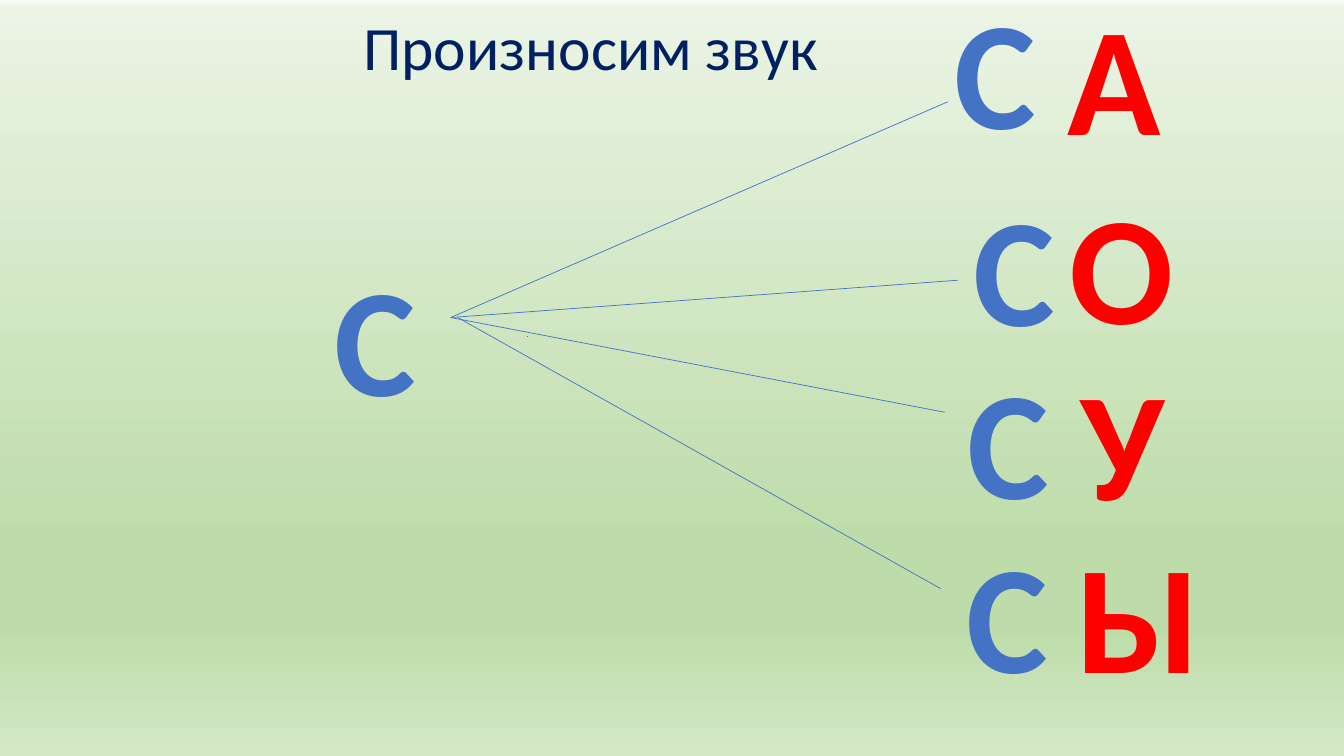
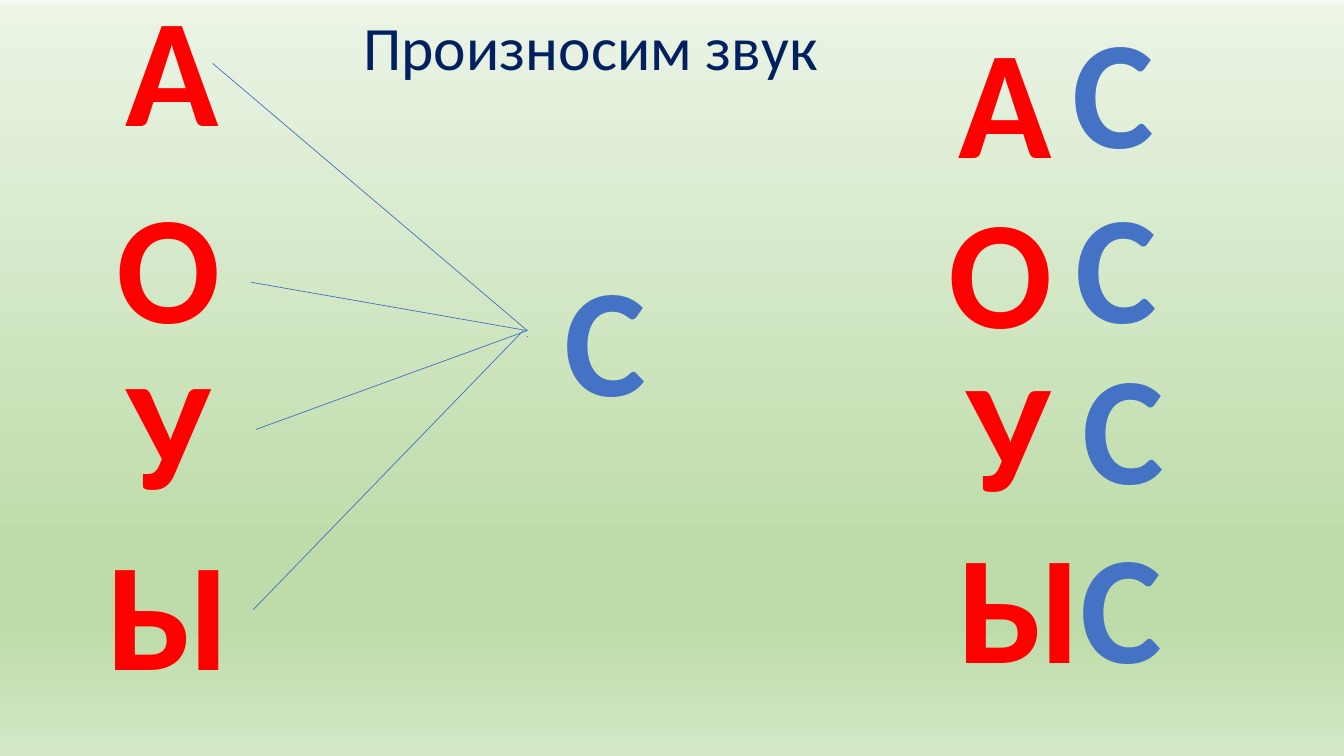
from lxml import etree
from pptx import Presentation
from pptx.dml.color import RGBColor
from pptx.enum.shapes import MSO_CONNECTOR
from pptx.enum.text import MSO_ANCHOR, MSO_AUTO_SIZE, PP_ALIGN
from pptx.oxml.ns import qn
from pptx.util import Inches, Pt

LINE = MSO_CONNECTOR.STRAIGHT
MIDDLE, CENTER = MSO_ANCHOR.MIDDLE, PP_ALIGN.CENTER
GROW = MSO_AUTO_SIZE.SHAPE_TO_FIT_TEXT

FONT = "Calibri"
COLORS = {"title": "002060", "vowel": "FF0000", "cons": "4472C4"}
# Background stops: percent, colour
STOPS = [(0, "F8FBF6"), (1, "EBF4E5"), (72, "BEDCAA"),
         (83, "BEDCAA"), (100, "D4E8C6")]
TITLE = "Произносим звук "
CONS = "С"
WIDTHS = {"А": 1.14, "О": 1.25, "У": 1.05, "Ы": 1.43, CONS: 1.02}
HEIGHT = 1.95
TICK = ((5.23, 3.34), (5.23, 3.33))

# Letters, back to front: text, left, top; rays: from, to
SLIDES = [
    {"letters": [
        ("А", 10.49, -0.23), ("О", 10.51, 1.64),
        ("У", 10.62, 3.39), ("Ы", 10.59, 5.1),
        (CONS, 3.22, 2.36),
        (CONS, 9.37, -0.29), (CONS, 9.56, 1.66),
        (CONS, 9.5, 3.38), (CONS, 9.49, 5.1)],
     "rays": [
        ((4.47, 3.15), (9.4, 1.01)),
        ((4.47, 3.15), (9.5, 2.78)),
        ((4.47, 3.15), (9.37, 4.09)),
        ((4.54, 3.15), (9.33, 5.84))]},
    {"letters": [
        (CONS, 5.5, 2.36),
        ("О", 9.31, 1.68), ("У", 9.49, 3.3), ("Ы", 9.41, 5.01),
        ("А", 1.15, -0.32), ("О", 1.06, 1.63),
        ("У", 1.16, 3.28), ("Ы", 0.97, 5.07),
        (CONS, 10.54, -0.1), ("А", 9.41, 0),
        (CONS, 10.57, 1.63), (CONS, 10.64, 3.23), (CONS, 10.62, 5.01)],
     "rays": [
        ((2.11, 0.63), (5.23, 3.28)),
        ((5.23, 3.28), (2.49, 2.8)),
        ((5.23, 3.28), (2.54, 4.26)),
        ((5.19, 3.28), (2.51, 6.05))]},
]


def color(name):
    return RGBColor.from_string(COLORS[name])


def set_font(par, size, name, bold=False):
    font = par.font
    font.name, font.size, font.bold = FONT, Pt(size), bold
    font.color.rgb = color(name)


def paint_back(master):
    """Give the master a vertical gradient with all the stops."""
    fill = master.background.fill
    fill.gradient()
    fill.gradient_angle = 270
    stops = master.element.find(".//" + qn("a:gsLst"))
    for old in list(stops):
        stops.remove(old)
    for pct, tone in STOPS:
        stop = etree.SubElement(stops, qn("a:gs"), pos=str(pct * 1000))
        etree.SubElement(stop, qn("a:srgbClr"), val=tone)


def set_title(slide):
    title = slide.shapes.title
    title.left, title.top = Inches(0.18), Inches(-0.22)
    title.width, title.height = Inches(11.5), Inches(1.45)
    frame = title.text_frame
    frame.text = TITLE
    frame.vertical_anchor = MIDDLE
    par = frame.paragraphs[0]
    par.alignment, par.line_spacing = CENTER, 0.9
    set_font(par, 44, "title")


def add_letter(slide, text, left, top):
    box = slide.shapes.add_textbox(Inches(left), Inches(top),
                                   Inches(WIDTHS[text]), Inches(HEIGHT))
    frame = box.text_frame
    frame.text = text
    frame.word_wrap, frame.auto_size = False, GROW
    set_font(frame.paragraphs[0], 110,
             "cons" if text == CONS else "vowel", True)


def add_ray(slide, start, end):
    ray = slide.shapes.add_connector(
        LINE, *(Inches(n) for n in start + end))
    ray.line.color.rgb, ray.line.width = color("cons"), Pt(0.5)
    etree.SubElement(ray.element.spPr, qn("a:effectLst"))


def main():
    prs = Presentation()
    prs.slide_width, prs.slide_height = Inches(13.33), Inches(7.5)
    paint_back(prs.slide_master)
    for data in SLIDES:
        slide = prs.slides.add_slide(prs.slide_layouts[5])
        set_title(slide)
        for start, end in data["rays"] + [TICK]:
            add_ray(slide, start, end)
        for text, left, top in data["letters"]:
            add_letter(slide, text, left, top)
    prs.save("out.pptx")


if __name__ == "__main__":
    main()
